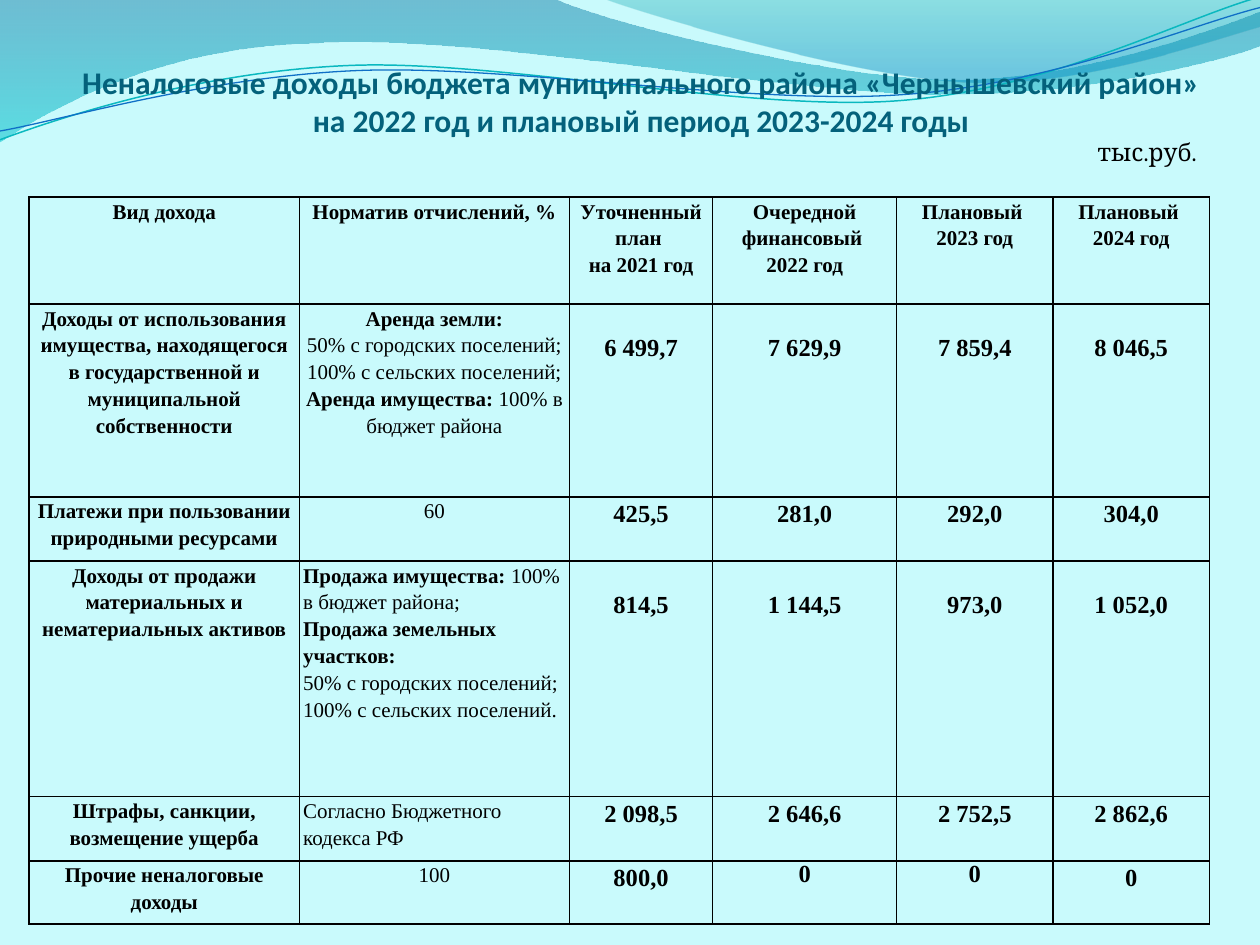
"""Build the slide on non-tax revenues of a municipal district budget."""
import dataclasses
from typing import Any, Optional

import lxml.etree
import pptx
import pptx.dml.color
import pptx.enum.text
import pptx.oxml.ns
import pptx.util

Pt = pptx.util.Pt
Color = pptx.dml.color.RGBColor.from_string
Align = pptx.enum.text.PP_ALIGN
Anchor = pptx.enum.text.MSO_ANCHOR
qn = pptx.oxml.ns.qn


@dataclasses.dataclass(frozen=True)
class Theme:
    """Colours, fonts and type sizes of the slide."""
    background: str = "C9FAFC"
    title: str = "04617B"
    text: str = "000000"
    title_font: str = "Calibri"
    unit_font: str = "Cambria"
    table_font: str = "Times New Roman"
    title_size: float = 18
    value_size: float = 14
    table_size: float = 12
    line_spacing: float = 1.15


THEME = Theme()


@dataclasses.dataclass(frozen=True)
class Stop:
    """Gradient stop with its position and opacity in percent."""
    position: float
    color: str
    opacity: int


@dataclasses.dataclass(frozen=True)
class Wave:
    """Curved outline; a step has one point for a line, three for a Bezier curve."""
    start: tuple[float, float]
    steps: list[tuple]
    stops: tuple[Stop, ...] = ()
    line: str = ""
    width: float = 0
    rotation: float = 0


@dataclasses.dataclass(frozen=True)
class Run:
    """Piece of text in one weight."""
    text: str
    bold: bool = True


@dataclasses.dataclass(frozen=True)
class Cell:
    """Table cell: paragraphs made of runs, and their layout."""
    paragraphs: list[list[Run]]
    size: float = THEME.table_size
    align: Any = Align.CENTER
    top: float = 0
    spacing: Optional[float] = THEME.line_spacing


WAVES = [
    Wave((0, 0), [((316.8, -0.7),),
                  ((342.7, 12.2), (478.1, 45.4), (545.8, 45.4)),
                  ((614.2, 45.4), (689.8, 18.7), (720, 6.5)), ((720.7, 25.9),),
                  ((707.8, 31.7), (626.4, 54.7), (537.1, 54)),
                  ((447.8, 54), (275, 20.2), (185, 24.5)),
                  ((92.9, 25.9), (33.1, 59.8), (-0.7, 81.4)), ((0, 0),)],
         stops=(Stop(0, "0074A1", 45), Stop(1, "00C6CF", 55))),
    Wave((344.9, -0.7), [((366.5, 7.9), (491, 44.6), (553.7, 46.8)),
                         ((616.3, 49.7), (691.9, 23), (720, 15.1)), ((720, 0),), ((344.9, -0.7),)],
         stops=(Stop(0, "00A1A9", 30), Stop(0.8, "008BBF", 45))),
    Wave((-1.4, 62.9), [((33.8, 51.7), (114.1, 29.4), (199.8, 29.9)),
                        ((284.8, 30.3), (425.9, 67.3), (512.5, 64.8)),
                        ((599.1, 62.4), (676.5, 25.7), (720.2, 15.6))],
         line="0AB8BF", width=0.85, rotation=357.3),
    Wave((-1.1, 57.9), [((32.9, 53.7), (118.3, 32.5), (204.1, 33)),
                        ((290.6, 33.4), (428.9, 63.8), (515.5, 61.4)),
                        ((601.4, 59.6), (678.4, 30.1), (721.4, 21.3))],
         line="0F6FC6", width=0.75, rotation=357.3),
]


def label(*lines: str) -> Cell:
    """Return a bold centred cell with one paragraph per line."""
    return Cell([[Run(line)] for line in lines])


def value(text: str, **layout: Any) -> Cell:
    """Return a cell holding one amount."""
    return Cell([[Run(text)]], size=THEME.value_size, **layout)


def values(*texts: str, top: float = 0) -> list[Cell]:
    """Return one amount cell per text."""
    return [value(text, top=top) for text in texts]


def plain(text: str, align: Any = Align.CENTER) -> Cell:
    """Return a cell in regular weight."""
    return Cell([[Run(text, False)]], align=align)


LOWERED = 15.5
URBAN = "50% с городских поселений;"
RENT = Cell([[Run("Аренда земли:")], [Run(URBAN, False)], [Run("100% с сельских поселений;", False)],
             [Run("Аренда имущества:"), Run(" 100% в бюджет района", False)]])
SALE = Cell([[Run("Продажа имущества:"), Run(" 100% в бюджет района;", False)],
             [Run("Продажа земельных участков:")], [Run(URBAN, False)],
             [Run("100% с сельских поселений.", False)]], align=Align.LEFT)
COLUMNS = [154.4, 154.4, 81.8, 105.2, 89.3, 89.4]
HEIGHTS = [61.2, 110.16, 36.72, 134.64, 36.72, 36]
ROWS = [
    [label("Вид дохода"), label("Норматив отчислений, %"),
     label("Уточненный план ", "на 2021 год"), label("Очередной финансовый ", "2022 год"),
     label("Плановый ", "2023 год"), label("Плановый ", "2024 год")],
    [label("Доходы от использования имущества, находящегося в государственной и муниципальной собственности"),
     RENT, *values("6 499,7", "7 629,9", "7 859,4", "8 046,5", top=LOWERED)],
    [label("Платежи при пользовании природными ресурсами"), plain("60"),
     *values("425,5", "281,0", "292,0", "304,0")],
    [label("Доходы от продажи материальных и нематериальных активов"),
     SALE, *values("814,5", "1 144,5", "973,0", "1 052,0", top=LOWERED)],
    [label("Штрафы, санкции, возмещение ущерба"), plain("Согласно Бюджетного кодекса РФ", Align.LEFT),
     *values("2 098,5", "2 646,6", "2 752,5", "2 862,6")],
    [label("Прочие неналоговые доходы"), plain("100"),
     value("800,0"), value("0", spacing=None), value("0", spacing=None), value("0")],
]


def add_run(paragraph: Any, text: str, *, font: str, size: float, color: str, bold: bool = False) -> None:
    """Append formatted text to a paragraph."""
    run = paragraph.add_run()
    run.text = text
    run.font.name, run.font.size, run.font.bold = font, Pt(size), bold
    run.font.color.rgb = Color(color)


def bend(shape: Any, wave: Wave) -> None:
    """Join each group of three outline segments into one Bezier curve."""
    segments = iter(list(shape.element.spPr.iter(qn("a:lnTo"))))
    for step in wave.steps:
        group = [next(segments) for _ in step]
        if len(group) == 3:
            curve = lxml.etree.Element(qn("a:cubicBezTo"))
            group[0].addprevious(curve)
            for segment in group:
                curve.append(segment[0])
                segment.getparent().remove(segment)


def draw_wave(slide: Any, wave: Wave) -> None:
    """Draw a wave as a gradient area or as a thin line."""
    builder = slide.shapes.build_freeform(*map(Pt, wave.start), scale=1.0)
    builder.add_line_segments([(Pt(x), Pt(y)) for step in wave.steps for x, y in step],
                              close=bool(wave.stops))
    shape = builder.convert_to_shape()
    bend(shape, wave)
    shape.rotation = wave.rotation
    shape.shadow.inherit = False
    if not wave.stops:
        shape.fill.background()
        shape.line.color.rgb, shape.line.width = Color(wave.line), Pt(wave.width)
        return
    shape.line.fill.background()
    shape.fill.gradient()
    shape.fill.gradient_angle = 270
    for target, stop in zip(shape.fill.gradient_stops, wave.stops):
        target.color.rgb, target.position = Color(stop.color), stop.position
    for element, stop in zip(shape.element.spPr.iter(qn("a:srgbClr")), wave.stops):
        lxml.etree.SubElement(element, qn("a:alpha"), val=str(stop.opacity * 1000))


def draw_text(slide: Any, text: str, box: tuple[float, ...], *, anchor: Any, side: float,
              bottom: float, **style: Any) -> None:
    """Draw a centred text box."""
    frame = slide.shapes.add_textbox(*map(Pt, box)).text_frame
    frame.word_wrap, frame.vertical_anchor = True, anchor
    frame.margin_left = frame.margin_right = Pt(side)
    frame.margin_bottom = Pt(bottom)
    frame.paragraphs[0].alignment = Align.CENTER
    add_run(frame.paragraphs[0], text, **style)


def fill_cell(target: Any, cell: Cell) -> None:
    """Write a table cell and draw its borders."""
    target.margin_left = target.margin_right = Pt(2.16)
    target.margin_top, target.margin_bottom = Pt(cell.top), Pt(0)
    frame = target.text_frame
    for index, runs in enumerate(cell.paragraphs):
        paragraph = frame.add_paragraph() if index else frame.paragraphs[0]
        paragraph.alignment, paragraph.line_spacing = cell.align, cell.spacing
        for run in runs:
            add_run(paragraph, run.text, font=THEME.table_font, size=cell.size, color=THEME.text, bold=run.bold)
    properties = target._tc.get_or_add_tcPr()
    for side in ("a:lnL", "a:lnR", "a:lnT", "a:lnB"):
        border = lxml.etree.SubElement(properties, qn(side), w=str(Pt(1)))
        solid = lxml.etree.SubElement(border, qn("a:solidFill"))
        lxml.etree.SubElement(solid, qn("a:srgbClr"), val=THEME.text)
    target.fill.background()


def draw_table(slide: Any, left: float, top: float) -> None:
    """Draw the revenue table."""
    table = slide.shapes.add_table(len(ROWS), len(COLUMNS), Pt(left), Pt(top),
                                   Pt(sum(COLUMNS)), Pt(sum(HEIGHTS))).table
    table.first_row = table.horz_banding = False
    for column, width in zip(table.columns, COLUMNS):
        column.width = Pt(width)
    for row, height, cells in zip(table.rows, HEIGHTS, ROWS):
        row.height = Pt(height)
        for target, cell in zip(row.cells, cells):
            fill_cell(target, cell)


def main() -> None:
    """Build and save the presentation."""
    presentation = pptx.Presentation()
    presentation.slide_width, presentation.slide_height = Pt(720), Pt(540)
    slide = presentation.slides.add_slide(presentation.slide_layouts[6])
    slide.background.fill.solid()
    slide.background.fill.fore_color.rgb = Color(THEME.background)
    for wave in WAVES:
        draw_wave(slide, wave)
    draw_text(slide, "Неналоговые доходы бюджета муниципального района «Чернышевский район» "
              "на 2022 год и плановый период 2023-2024 годы", (39.6, 28.08, 653.76, 51.12),
              anchor=Anchor.BOTTOM, side=0, bottom=0, font=THEME.title_font, size=THEME.title_size,
              color=THEME.title, bold=True)
    draw_text(slide, "тыс.руб.", (607.68, 78.48, 95.76, 16.56), anchor=Anchor.MIDDLE, side=7.2,
              bottom=3.6, font=THEME.unit_font, size=THEME.value_size, color=THEME.text)
    draw_table(slide, 16.7, 112.5)
    presentation.save("out.pptx")


if __name__ == "__main__":
    main()
